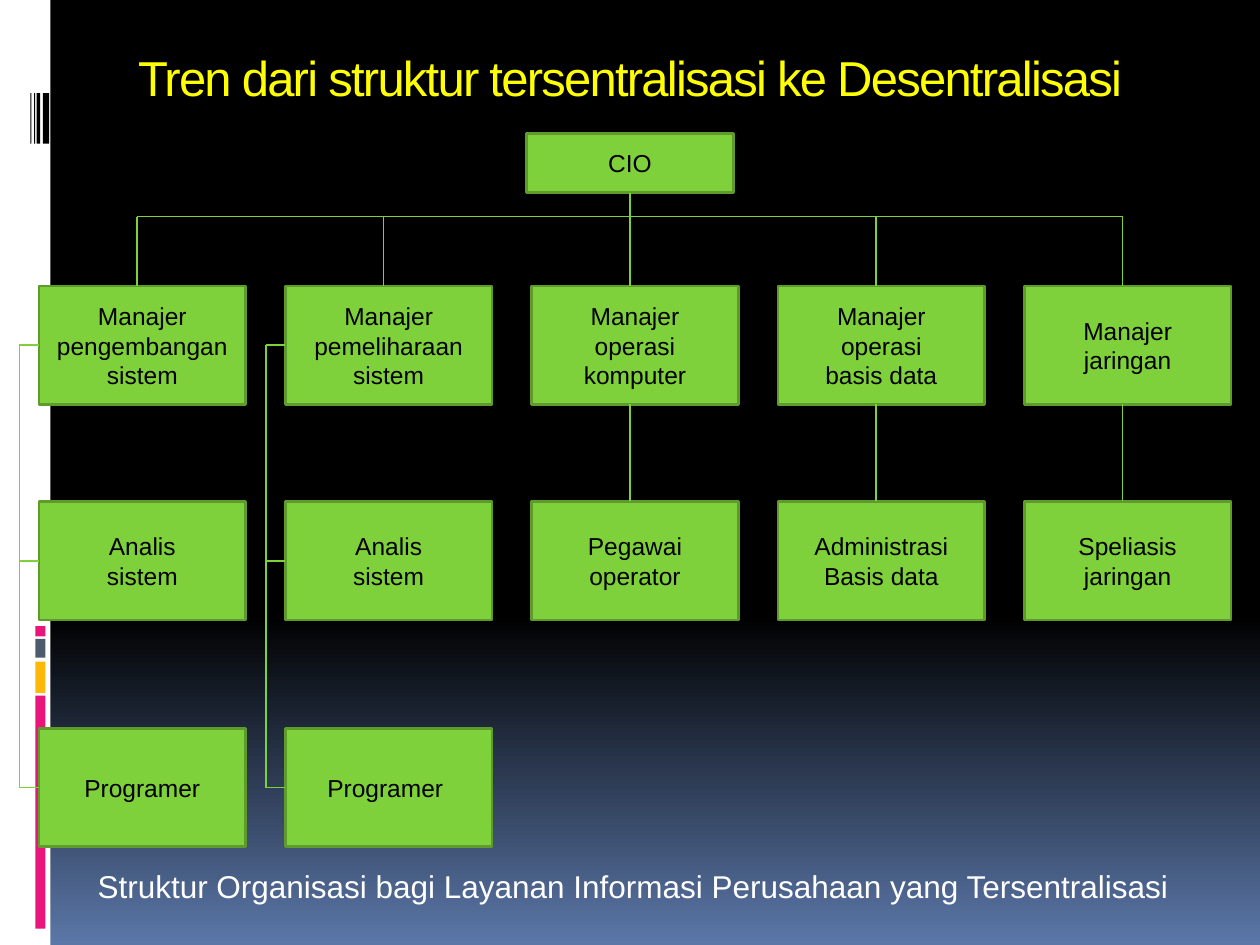
from pptx import Presentation
from pptx.dml.color import RGBColor
from pptx.enum.shapes import MSO_CONNECTOR, MSO_SHAPE
from pptx.enum.text import MSO_ANCHOR, PP_ALIGN
from pptx.oxml.ns import qn
from pptx.util import Inches, Pt
from lxml.etree import SubElement

TITLE = "Tren dari struktur tersentralisasi ke Desentralisasi"
NOTE = "Struktur Organisasi bagi Layanan Informasi Perusahaan yang Tersentralisasi"
HEAD = "CIO"
ROWS = [
    (2.27, ["Manajer\npengembangan\nsistem", "Manajer\npemeliharaan\nsistem",
            "Manajer\noperasi\nkomputer", "Manajer\noperasi\nbasis data",
            "Manajer\njaringan"]),
    (3.98, ["Analis\nsistem", "Analis\nsistem", "Pegawai\noperator",
            "Administrasi\nBasis data", "Speliasis\njaringan"]),
    (5.78, ["Programer", "Programer "]),
]
BARS = [
    (0, 0, 0.4, 7.5, "FFFFFF"),
    (0.28, 5.52, 0.08, 1.85, "EA157A"),
    (0.28, 5.25, 0.08, 0.25, "FEB80A"),
    (0.28, 5.07, 0.08, 0.15, "4E5B6F"),
    (0.28, 4.97, 0.08, 0.08, "EA157A"),
    (0.34, 0.74, 0.05, 0.4, "000000"),
    (0.29, 0.74, 0.03, 0.4, "000000"),
    (0.27, 0.74, 0.01, 0.4, "000000"),
    (0.24, 0.74, 0.01, 0.4, "000000"),
]
GREEN, EDGE = "7FD13B", "5E9B2C"
LEFT, STEP, WIDE, HIGH = 0.31, 1.955, 1.64, 0.94
DROP, RAIL, SIDE = 1.09, 1.72, 0.155
BOX = {"size": Pt(14), "name": "Arial"}
BIG = {"size": Pt(28), "name": "Arial"}
SUB = {"size": Pt(18), "name": "Arial"}


def tint(code):
    return RGBColor.from_string(code)


def write(shape, text, style, color, **frame):
    body = shape.text_frame
    for key, val in {"word_wrap": True, **frame}.items():
        setattr(body, key, val)
    for num, line in enumerate(text.split("\n")):
        para = body.paragraphs[0] if num == 0 else body.add_paragraph()
        para.alignment = PP_ALIGN.CENTER
        run = para.add_run()
        run.text = line
        for key, val in style.items():
            setattr(run.font, key, val)
        run.font.color.rgb = tint(color)


def block(slide, x, y, w, h, fill, edge=None):
    shape = slide.shapes.add_shape(MSO_SHAPE.RECTANGLE, *map(Inches, (x, y, w, h)))
    shape.shadow.inherit = False
    shape.fill.solid()
    shape.fill.fore_color.rgb = tint(fill)
    if edge:
        shape.line.color.rgb = tint(edge)
        shape.line.width = Pt(1.5)
    else:
        shape.line.fill.background()
    return shape


def card(slide, x, y, h, text):
    shape = block(slide, x, y, WIDE, h, GREEN, EDGE)
    write(shape, text, BOX, "000000", vertical_anchor=MSO_ANCHOR.MIDDLE)
    return shape


def link(slide, *ends):
    line = slide.shapes.add_connector(MSO_CONNECTOR.STRAIGHT, *map(Inches, ends))
    line.line.color.rgb = tint(GREEN)
    line.line.width = Pt(0.94)
    SubElement(line._element.spPr, qn("a:effectLst"))
    return line


def label(slide, x, y, w, h, text, style, color, **frame):
    shape = slide.shapes.add_textbox(*map(Inches, (x, y, w, h)))
    write(shape, text, style, color, **frame)
    return shape


def main():
    """Build the organisation chart slide."""
    deck = Presentation()
    deck.slide_width, deck.slide_height = Inches(10), Inches(7.5)
    slide = deck.slides.add_slide(deck.slide_layouts[6])
    back = slide.background.fill
    back.gradient()
    back.gradient_angle = 270
    for stop, (spot, code) in zip(back.gradient_stops, [(0.65, "000000"), (1, "5B77A8")]):
        stop.position = spot
        stop.color.rgb = tint(code)

    for bar in BARS:
        block(slide, *bar)
    title = label(slide, 0.5, 0.29, 9, 0.68, TITLE, BIG, "FFFF00", margin_top=Inches(0.09))
    title.text_frame.paragraphs[0].runs[0].font._element.set("spc", "-100")

    grid = [[card(slide, LEFT + STEP * col, y, HIGH, text)
             for col, text in enumerate(texts)] for y, texts in ROWS]
    chief = card(slide, 4.18, 1.06, 0.47, HEAD)

    top, low = ROWS[0][0], ROWS[1][0]
    drops = [DROP + STEP * col for col in range(5)]
    for x in drops[:2] + drops[3:]:
        link(slide, x, top, x, RAIL)
    link(slide, 5, 1.53, 5, top).begin_connect(chief, 2)
    link(slide, drops[0], RAIL, drops[-1], RAIL)
    for x in drops[2:]:
        link(slide, x, low, x, top + HIGH)

    mids = [y + HIGH / 2 for y, texts in ROWS]
    for col in range(2):
        edge = LEFT + STEP * col
        x = edge - SIDE
        for y, row in zip(mids, grid):
            link(slide, edge, y, x, y).begin_connect(row[col], 1)
        link(slide, x, mids[0], x, mids[-1])

    label(slide, 0.16, 6.83, 9.73, 0.4, NOTE, SUB, "FFFFFF")
    deck.save("out.pptx")


if __name__ == "__main__":
    main()
